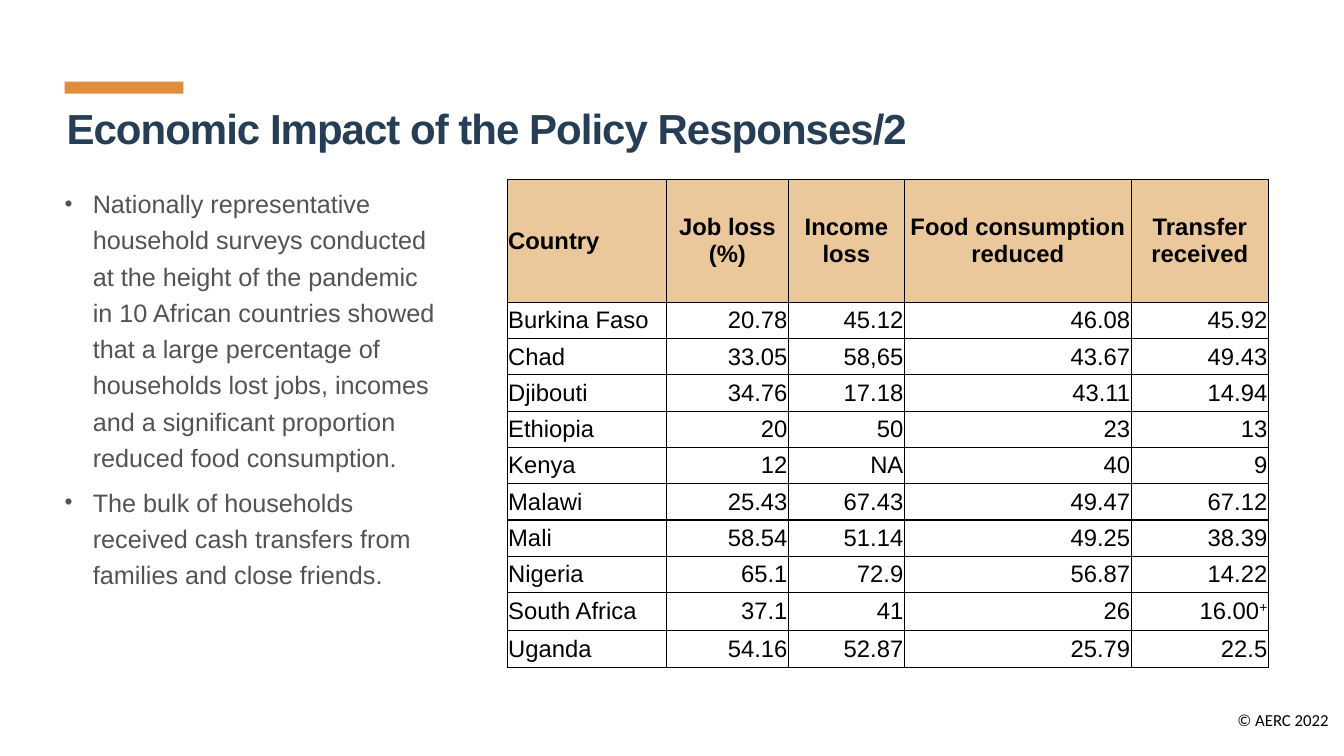
from dataclasses import dataclass

import pptx
import pptx.dml.color
import pptx.enum.shapes
import pptx.enum.text
import pptx.oxml
import pptx.oxml.ns
import pptx.util

PX = 9144  # 100 px to the inch
COLORS = {"navy": "263D56", "grey": "535353", "orange": "E28D3D",
          "sand": "EAC89B", "black": "000000"}
ALIGN = pptx.enum.text.PP_ALIGN
ANCHOR = pptx.enum.text.MSO_ANCHOR
INSET = 5
CELL_INSET = 1
INDENT = 28


@dataclass(frozen=True)
class Style:
    size: int
    color: str
    name: str = "Arial"
    bold: bool = False


@dataclass(frozen=True)
class TextBox:
    box: tuple[int, int, int, int]
    paragraphs: tuple[str, ...]
    style: Style
    para: dict
    anchor: ANCHOR = ANCHOR.TOP
    bullet: bool = False
    tracking: int = 0


TITLE = TextBox((61, 102, 1178, 58), ("Economic Impact of the Policy Responses/2",),
                Style(30, "navy", bold=True), {"line_spacing": 0.85},
                anchor=ANCHOR.MIDDLE, tracking=-70)
BODY = TextBox((59, 176, 378, 395), (
    "Nationally representative household surveys conducted at the height of the "
    "pandemic in 10 African countries showed that a large percentage of households "
    "lost jobs, incomes and a significant proportion reduced food consumption.",
    "The bulk of households received cash transfers from families and close friends.",
), Style(18, "grey"), {"line_spacing": 1.2, "space_before": pptx.util.Pt(6)}, bullet=True)
FOOTER = TextBox((1116, 699, 207, 27), ("© AERC 2022",),
                 Style(12, "black", "Calibri"), {"alignment": ALIGN.RIGHT})

ACCENT = (64, 81, 118, 12)
TABLE_AT = (503, 178)
COLS = (158, 121, 115, 225, 136)
HEADER_H, ROW_H, NOTED_ROW_H = 122, 36, 38
NOTE = "+"
HEAD = Style(17, "black", bold=True)
CELL = Style(17, "black")
ROWS = (
    ("Country", "Job loss (%)", "Income loss", "Food consumption reduced", "Transfer received"),
    ("Burkina Faso", "20.78", "45.12", "46.08", "45.92"),
    ("Chad", "33.05", "58,65", "43.67", "49.43"),
    ("Djibouti", "34.76", "17.18", "43.11", "14.94"),
    ("Ethiopia", "20", "50", "23", "13"),
    ("Kenya", "12", "NA", "40", "9"),
    ("Malawi", "25.43", "67.43", "49.47", "67.12"),
    ("Mali", "58.54", "51.14", "49.25", "38.39"),
    ("Nigeria", "65.1", "72.9", "56.87", "14.22"),
    ("South Africa", "37.1", "41", "26", "16.00+"),
    ("Uganda", "54.16", "52.87", "25.79", "22.5"),
)


def rgb(key: str) -> pptx.dml.color.RGBColor:
    return pptx.dml.color.RGBColor.from_string(COLORS[key])


def px(*values: int) -> list[int]:
    return [v * PX for v in values]


def set_all(obj, values: dict) -> None:
    for key, value in values.items():
        setattr(obj, key, value)


def margins(inset: int) -> dict:
    return {f"margin_{side}": inset * PX for side in ("left", "top", "right", "bottom")}


def add_xml(parent, xml: str) -> None:
    xml = xml.replace(">", f" {pptx.oxml.ns.nsdecls('a')}>", 1)
    parent.append(pptx.oxml.parse_xml(xml))


def add_run(p, text: str, style: Style):
    r = p.add_run()
    r.text = text
    set_all(r.font, {"size": pptx.util.Pt(style.size), "name": style.name, "bold": style.bold})
    r.font.color.rgb = rgb(style.color)
    return r


def add_bullet(p) -> None:
    pPr = p._p.get_or_add_pPr()
    pPr.set("marL", str(INDENT * PX))
    pPr.set("indent", str(-INDENT * PX))
    add_xml(pPr, f'<a:buClr><a:srgbClr val="{COLORS["grey"]}"/></a:buClr>')
    add_xml(pPr, '<a:buSzPct val="90000"></a:buSzPct>')
    add_xml(pPr, '<a:buFont typeface="Arial"></a:buFont>')
    add_xml(pPr, '<a:buChar char="•"></a:buChar>')


def add_text(slide, item: TextBox) -> None:
    tf = slide.shapes.add_textbox(*px(*item.box)).text_frame
    set_all(tf, {"word_wrap": True, "vertical_anchor": item.anchor, **margins(INSET)})
    for i, text in enumerate(item.paragraphs):
        p = tf.add_paragraph() if i else tf.paragraphs[0]
        if item.bullet:
            add_bullet(p)
        set_all(p, item.para)
        if i == 0:
            p.space_before = pptx.util.Pt(0)
        r = add_run(p, text, item.style)
        if item.tracking:
            r.font._element.set("spc", str(item.tracking))


def add_borders(cell) -> None:
    tcPr = cell._tc.get_or_add_tcPr()
    for side in "LRTB":
        add_xml(tcPr, f'<a:ln{side} w="12700"><a:solidFill><a:srgbClr '
                      f'val="{COLORS["black"]}"/></a:solidFill></a:ln{side}>')


def fill_cell(cell, text: str, is_head: bool, is_label: bool) -> None:
    set_all(cell, {"vertical_anchor": ANCHOR.MIDDLE, **margins(CELL_INSET)})
    add_borders(cell)
    if is_head:
        cell.fill.solid()
        cell.fill.fore_color.rgb = rgb("sand")
    else:
        cell.fill.background()
    p = cell.text_frame.paragraphs[0]
    p.alignment = ALIGN.LEFT if is_label else ALIGN.CENTER if is_head else ALIGN.RIGHT
    value = text.removesuffix(NOTE)
    style = HEAD if is_head else CELL
    add_run(p, value, style)
    if value != text:
        add_run(p, NOTE, style).font._element.set("baseline", "30000")


def add_country_table(slide) -> None:
    heights = [HEADER_H] + [NOTED_ROW_H if row[-1].endswith(NOTE) else ROW_H
                            for row in ROWS[1:]]
    table = slide.shapes.add_table(len(ROWS), len(COLS),
                                   *px(*TABLE_AT, sum(COLS), sum(heights))).table
    set_all(table, {"first_row": False, "horz_banding": False})
    for col, width in zip(table.columns, COLS):
        col.width = width * PX
    for i, (row, height) in enumerate(zip(ROWS, heights)):
        table.rows[i].height = height * PX
        for j, text in enumerate(row):
            fill_cell(table.cell(i, j), text, i == 0, j == 0)


def main() -> None:
    prs = pptx.Presentation()
    set_all(prs, {"slide_width": 1333 * PX, "slide_height": 750 * PX})
    slide = prs.slides.add_slide(prs.slide_layouts[6])

    # Footer and accent bar
    add_text(slide, FOOTER)
    sp = slide.shapes.add_shape(pptx.enum.shapes.MSO_SHAPE.RECTANGLE, *px(*ACCENT))
    sp.shadow.inherit = False
    sp.fill.solid()
    sp.fill.fore_color.rgb = rgb("orange")
    sp.line.fill.background()

    # Survey results, findings and title
    add_country_table(slide)
    add_text(slide, BODY)
    add_text(slide, TITLE)
    prs.save("out.pptx")


if __name__ == "__main__":
    main()
